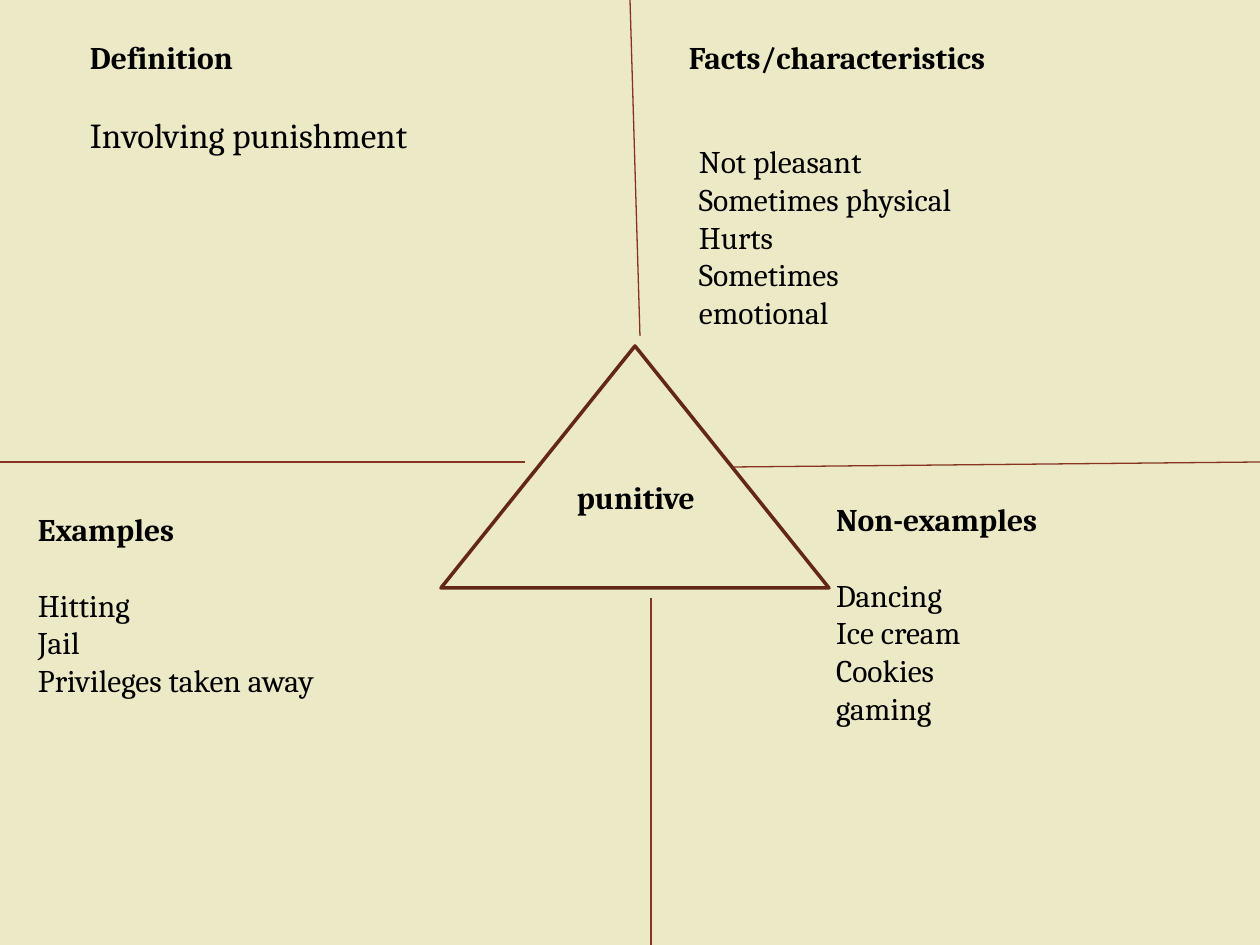
from lxml import etree
from pptx import Presentation
from pptx import util as u
from pptx.dml.color import RGBColor
from pptx.enum import shapes, text
from pptx.oxml.ns import qn

PX = 914400 / 126
HEX = {"back": "ECE9C6", "edge": "63271A", "rule": "863321", "ink": "000000"}


def px(n):
    return u.Emu(round(n * PX))


def write(lines, x, y, w, h, head=True, size=18, inset=6):
    """Add a text box; with head, the first line is bold and a gap follows it."""
    box = slide.shapes.add_textbox(px(x), px(y), px(w), px(h))
    frame = box.text_frame
    frame.word_wrap = True
    frame.auto_size = text.MSO_AUTO_SIZE.NONE
    frame.margin_left = px(inset)
    frame.margin_right = frame.margin_top = frame.margin_bottom = px(6)
    for i, line in enumerate(lines):
        para = frame.paragraphs[0] if i == 0 else frame.add_paragraph()
        if head and i == 1:
            para.space_before = u.Pt(21.6)
        run = para.add_run()
        run.text = line
        font = run.font
        font.name = "Cambria"
        font.size = u.Pt(size if i else 18)
        font.bold = head and i == 0
        font.color.rgb = RGBColor.from_string(HEX["ink"])


prs = Presentation()
prs.slide_width, prs.slide_height = px(1260), px(945)
slide = prs.slides.add_slide(prs.slide_layouts[6])
fill = slide.background.fill
fill.solid()
fill.fore_color.rgb = RGBColor.from_string(HEX["back"])

# Central triangle with the word
form = slide.shapes.build_freeform(441, 588, scale=PX)
form.add_line_segments([(635, 346), (829, 588)], close=True)
tri = form.convert_to_shape()
tri.shadow.inherit = False
tri.fill.background()
tri.line.color.rgb = RGBColor.from_string(HEX["edge"])
tri.line.width = u.Pt(2)
write(["punitive"], 557, 472, 168, 48, inset=20)

# Lines between the four fields
for x1, y1, x2, y2 in [
    (630, 0, 640, 336),
    (651, 598, 651, 945),
    (732, 467, 1260, 462),
    (525, 462, 0, 462),
]:
    rule = slide.shapes.add_connector(
        shapes.MSO_CONNECTOR.STRAIGHT, px(x1), px(y1), px(x2), px(y2))
    rule.line.color.rgb = RGBColor.from_string(HEX["rule"])
    rule.line.width = u.Pt(0.75)
    etree.SubElement(rule._element.spPr, qn("a:effectLst"))

# The four fields
write(["Definition", "Involving punishment"], 84, 32, 483, 199, size=20)
write(["Facts/characteristics"], 683, 32, 536, 159)
write(["Examples", "Hitting", "Jail", "Privileges taken away"],
      32, 504, 399, 195)
write(["Non-examples", "Dancing", "Ice cream", "Cookies", "gaming"],
      830, 494, 399, 232)
write(["Not pleasant", "Sometimes physical", "Hurts", "Sometimes emotional"],
      693, 136, 288, 159, head=False)

prs.save("out.pptx")
